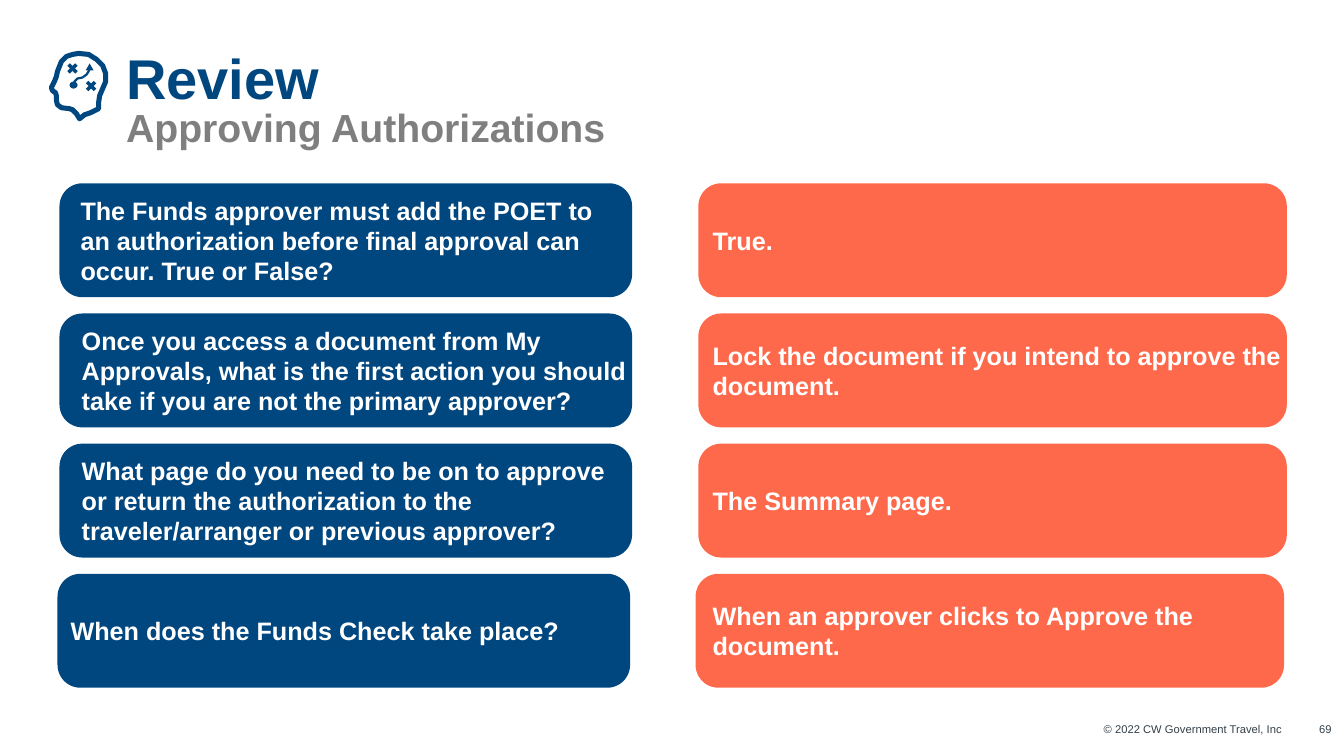
from pptx import Presentation
from pptx.dml.color import RGBColor
from pptx.enum.shapes import MSO_SHAPE as SHAPE
from pptx.enum.text import MSO_ANCHOR as ANCHOR, PP_ALIGN as ALIGN
from pptx.util import Cm, Pt

NAVY, CORAL, GRAY, SLATE, WHITE = "00467F", "FF694B", "7F7F7F", "333F48", "FFFFFF"

ROW_TOP, ROW_PITCH, CARD_H = 4.62, 3.28, 2.87
QUESTION_W, ANSWER_W = 14.43, 14.83
ANSWER_TEXT_X, ANSWER_TEXT_W = 17.96, 14.48

# question, its text left and width, answer, card lefts
ROWS = [
    ("The Funds approver must add the POET to an authorization before final "
     "approval can occur. True or False?", 2.03, 13.36, "True.", 1.5, 17.6),
    ("Once you access a document from My Approvals, what is the first action "
     "you should take if you are not the primary approver?", 2.06, 13.82,
     "Lock the document if you intend to approve the document.", 1.5, 17.6),
    ("What page do you need to be on to approve or return the authorization to "
     "the traveler/arranger or previous approver?", 2.06, 13.59,
     "The Summary page.", 1.5, 17.6),
    ("When does the Funds Check take place?", 1.78, 14.1,
     "When an approver clicks to Approve the document.", 1.45, 17.53),
]

# Icon outlines on a grid 60 wide and 70 high
HEAD = [(30, 3), (40, 4), (48, 9), (54, 15), (57, 23), (57, 31), (54, 38), (51, 45),
        (49.5, 52), (50, 57.5), (42, 61.5), (36, 64.5), (31, 67.5), (28, 63), (24, 59),
        (21, 58.5), (13, 57), (9, 54), (8, 50), (7.5, 45), (7, 41.5), (3.5, 39.5),
        (3, 37), (6, 31), (8.5, 26.5), (9, 21), (13, 11), (18, 6), (24, 3.5)]
ROUTE = [(25, 35), (26, 31), (29, 28.5), (34, 27), (38, 24), (40, 21), (41, 17)]


def rgb(value):
    return RGBColor.from_string(value)


def add_preset(s, kind, x, y, w, h, color):
    sp = s.shapes.add_shape(kind, Cm(x), Cm(y), Cm(w), Cm(h))
    sp.shadow.inherit = False
    sp.fill.solid()
    sp.fill.fore_color.rgb = rgb(color)
    sp.line.fill.background()
    return sp


def add_text(s, x, y, w, h, lines, anchor=ANCHOR.TOP, align=ALIGN.LEFT, spacing=1.0):
    """Each line is (text, size, colour, bold) and becomes a paragraph."""
    tf = s.shapes.add_textbox(Cm(x), Cm(y), Cm(w), Cm(h)).text_frame
    tf.word_wrap = True
    tf.vertical_anchor = anchor
    tf.margin_left = tf.margin_right = tf.margin_top = tf.margin_bottom = 0
    for i, (text, size, color, bold) in enumerate(lines):
        p = tf.paragraphs[0] if i == 0 else tf.add_paragraph()
        p.text = text
        p.alignment = align
        p.line_spacing = spacing
        p.font.name = "Arial"
        p.font.size = Pt(size)
        p.font.bold = bold
        p.font.color.rgb = rgb(color)


def add_outline(s, x, y, unit, points, width, close):
    fb = s.shapes.build_freeform(*points[0], scale=Cm(unit))
    fb.add_line_segments(points[1:], close=close)
    sp = fb.convert_to_shape(Cm(x), Cm(y))
    sp.shadow.inherit = False
    sp.fill.background()
    sp.line.color.rgb = rgb(NAVY)
    sp.line.width = Pt(width)


def add_head_icon(s, x, y, w):
    unit = w / 60
    add_outline(s, x, y, unit, HEAD, 3.6, True)
    add_outline(s, x, y, unit, ROUTE, 1.6, False)
    for kind, left, top, width, height in [
        (SHAPE.OVAL, 21, 31, 8, 7),
        (SHAPE.ISOSCELES_TRIANGLE, 37, 13, 8, 7),
        (SHAPE.MATH_MULTIPLY, 16.5, 10.5, 15, 15),
        (SHAPE.MATH_MULTIPLY, 35, 28, 15, 15),
    ]:
        add_preset(s, kind, x + left * unit, y + top * unit,
                   width * unit, height * unit, NAVY)


def add_header(s, x, y):
    add_head_icon(s, x, y, 1.52)
    add_text(s, x + 1.96, y + 0.08, 29.29, 2.34,
             [("Review", 40, NAVY, True), ("Approving Authorizations", 28, GRAY, True)],
             spacing=0.85)


def add_card(s, x, y, w, color, text, text_x, text_w):
    card = add_preset(s, SHAPE.ROUNDED_RECTANGLE, x, y, w, CARD_H, color)
    card.adjustments[0] = 0.2
    add_text(s, text_x, y, text_w, CARD_H, [(text, 18, WHITE, True)], ANCHOR.MIDDLE)


def add_review_rows(s):
    for i, (question, text_x, text_w, answer, left, right) in enumerate(ROWS):
        y = ROW_TOP + i * ROW_PITCH
        add_card(s, left, y, QUESTION_W, NAVY, question, text_x, text_w)
        add_card(s, right, y, ANSWER_W, CORAL, answer, ANSWER_TEXT_X, ANSWER_TEXT_W)


def add_footer(s, y):
    for x, w, text in [(21.28, 11.03, "© 2022 CW Government Travel, Inc"),
                       (32.72, 0.84, "69")]:
        add_text(s, x, y, w, 0.36, [(text, 8, SLATE, False)], align=ALIGN.RIGHT)


def main():
    prs = Presentation()
    prs.slide_width, prs.slide_height = Cm(33.87), Cm(19.05)
    s = prs.slides.add_slide(prs.slide_layouts[6])
    add_header(s, 1.22, 1.27)
    add_review_rows(s)
    add_footer(s, 18.21)
    prs.save("out.pptx")


if __name__ == "__main__":
    main()
